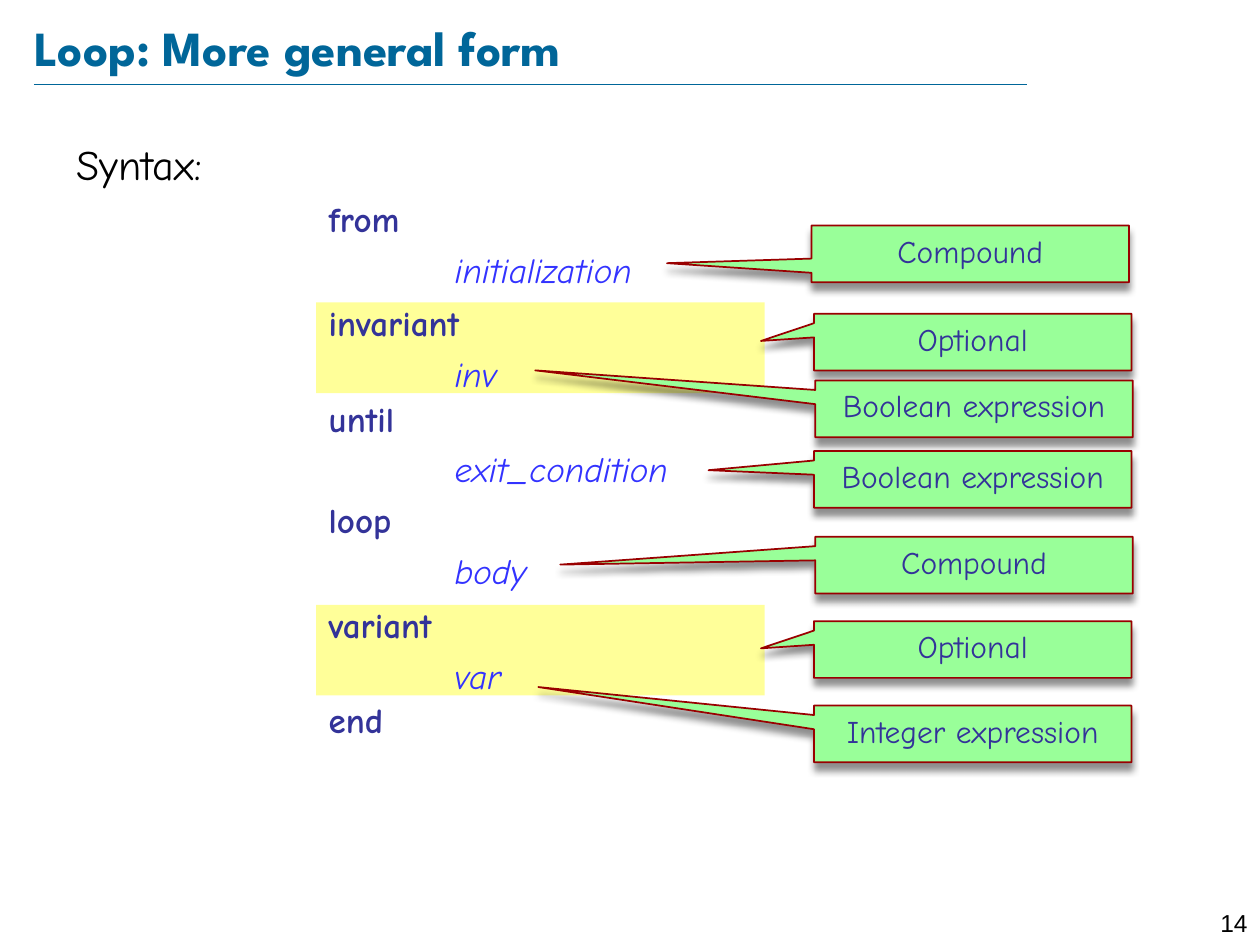
"""Build the slide on the general form of a loop."""
import pptx
import pptx.dml.color
import pptx.enum.shapes
import pptx.enum.text
import pptx.oxml
import pptx.oxml.ns
import pptx.util

Inches = pptx.util.Inches
Pt = pptx.util.Pt
RGBColor = pptx.dml.color.RGBColor
Shape = pptx.enum.shapes.MSO_SHAPE
Align = pptx.enum.text.PP_ALIGN
Anchor = pptx.enum.text.MSO_ANCHOR

TEAL = RGBColor(0x00, 0x66, 0x99)
NAVY = RGBColor(0x33, 0x33, 0x99)
BLUE = RGBColor(0x33, 0x33, 0xFF)
BLACK = RGBColor(0x00, 0x00, 0x00)
YELLOW = RGBColor(0xFF, 0xFF, 0x99)
GREEN = RGBColor(0x99, 0xFF, 0x99)
RED = RGBColor(0x99, 0x00, 0x00)
BODY_FONT = "Comic Neue"
ROW_GAP = 5
CLAUSE_GAP = 61
SHADOW = (
    f'<a:outerShdw {pptx.oxml.ns.nsdecls("a")} blurRad="50800" dist="50800" dir="5400000" '
    'algn="ctr" rotWithShape="0"><a:srgbClr val="000000"><a:alpha val="43000"/>'
    '</a:srgbClr></a:outerShdw>'
)


def write(para, text, size, color, name=BODY_FONT, bold=False, italic=False):
    para.text = text
    font = para.font
    font.size, font.name, font.bold, font.italic = Pt(size), name, bold, italic
    font.color.rgb = color


def write_code(para, text, is_keyword, indent, gap):
    para.alignment = Align.LEFT
    para.space_before = Pt(gap)
    para._p.get_or_add_pPr().set("marL", str(Inches(indent if is_keyword else indent + 1)))
    write(para, text, 20, NAVY if is_keyword else BLUE, bold=is_keyword, italic=not is_keyword)


deck = pptx.Presentation()
deck.slide_width, deck.slide_height = Inches(10), Inches(7.5)
page = deck.slides.add_slide(deck.slide_layouts[6])

rule = page.shapes.add_connector(
    pptx.enum.shapes.MSO_CONNECTOR.STRAIGHT, Inches(0.27), Inches(0.67), Inches(8.15), Inches(0.67))
rule.line.color.rgb = TEAL
rule.line.width = Pt(0.25)
rule._element.spPr.append(pptx.oxml.parse_xml(f'<a:effectLst {pptx.oxml.ns.nsdecls("a")}/>'))

title = page.shapes.add_textbox(Inches(0.27), Inches(0.13), Inches(8.69), Inches(0.48)).text_frame
title.word_wrap = True
title.vertical_anchor = Anchor.MIDDLE
title.margin_left = title.margin_right = title.margin_top = title.margin_bottom = 0
write(title.paragraphs[0], "Loop: More general form", 28, TEAL, "League Spartan", bold=True)

number = page.shapes.add_textbox(Inches(9.45), Inches(7.16), Inches(0.55), Inches(0.24)).text_frame
number.word_wrap = True
number.paragraphs[0].alignment = Align.RIGHT
write(number.paragraphs[0], "14", 14, BLACK, "Arial")

for top, keyword, content in ((2.4, "invariant", "inv"), (4.8, "variant", "var")):
    box = page.shapes.add_shape(Shape.RECTANGLE, Inches(2.51), Inches(top), Inches(3.56), Inches(0.72))
    box.shadow.inherit = False
    box.fill.solid()
    box.fill.fore_color.rgb = YELLOW
    box.line.fill.background()
    frame = box.text_frame
    frame.vertical_anchor = Anchor.MIDDLE
    frame.margin_top = frame.margin_bottom = 0
    write_code(frame.paragraphs[0], keyword, True, 0, 0)
    write_code(frame.add_paragraph(), content, False, 0, ROW_GAP)

syntax = page.shapes.add_textbox(Inches(0.51), Inches(1.05), Inches(9.21), Inches(5.78)).text_frame
syntax.word_wrap = True
write(syntax.paragraphs[0], "Syntax:", 24, BLACK)
for text, is_keyword, gap in (
    ("from", True, ROW_GAP),
    ("initialization", False, ROW_GAP),
    ("until", True, CLAUSE_GAP),
    ("exit_condition", False, ROW_GAP),
    ("loop", True, ROW_GAP),
    ("body", False, ROW_GAP),
    ("end", True, CLAUSE_GAP),
):
    write_code(syntax.add_paragraph(), text, is_keyword, 2, gap)

for left, top, tip_x, tip_y, label in (
    (6.44, 1.79, -0.955, 0.164, "Compound"),
    (6.46, 2.49, -0.667, -0.02, "Optional"),
    (6.47, 3.02, -1.382, -0.68, "Boolean expression"),
    (6.46, 3.58, -0.832, -0.163, "Boolean expression"),
    (6.47, 4.26, -1.303, -0.008, "Compound"),
    (6.46, 4.93, -0.667, -0.02, "Optional"),
    (6.46, 5.6, -1.368, -0.828, "Integer expression"),
):
    callout = page.shapes.add_shape(
        Shape.RECTANGULAR_CALLOUT, Inches(left), Inches(top), Inches(2.52), Inches(0.45))
    callout.adjustments[0], callout.adjustments[1] = tip_x, tip_y
    callout.fill.solid()
    callout.fill.fore_color.rgb = GREEN
    callout.line.color.rgb = RED
    callout.line.width = Pt(1)
    callout.shadow.inherit = False
    effects = callout._element.spPr.find(pptx.oxml.ns.qn("a:effectLst"))
    effects.append(pptx.oxml.parse_xml(SHADOW))
    frame = callout.text_frame
    frame.vertical_anchor = Anchor.MIDDLE
    frame.margin_left = frame.margin_right = 0
    para = frame.paragraphs[0]
    para.alignment = Align.CENTER
    para.line_spacing = 0.8
    write(para, label, 18, NAVY)

deck.save("out.pptx")
